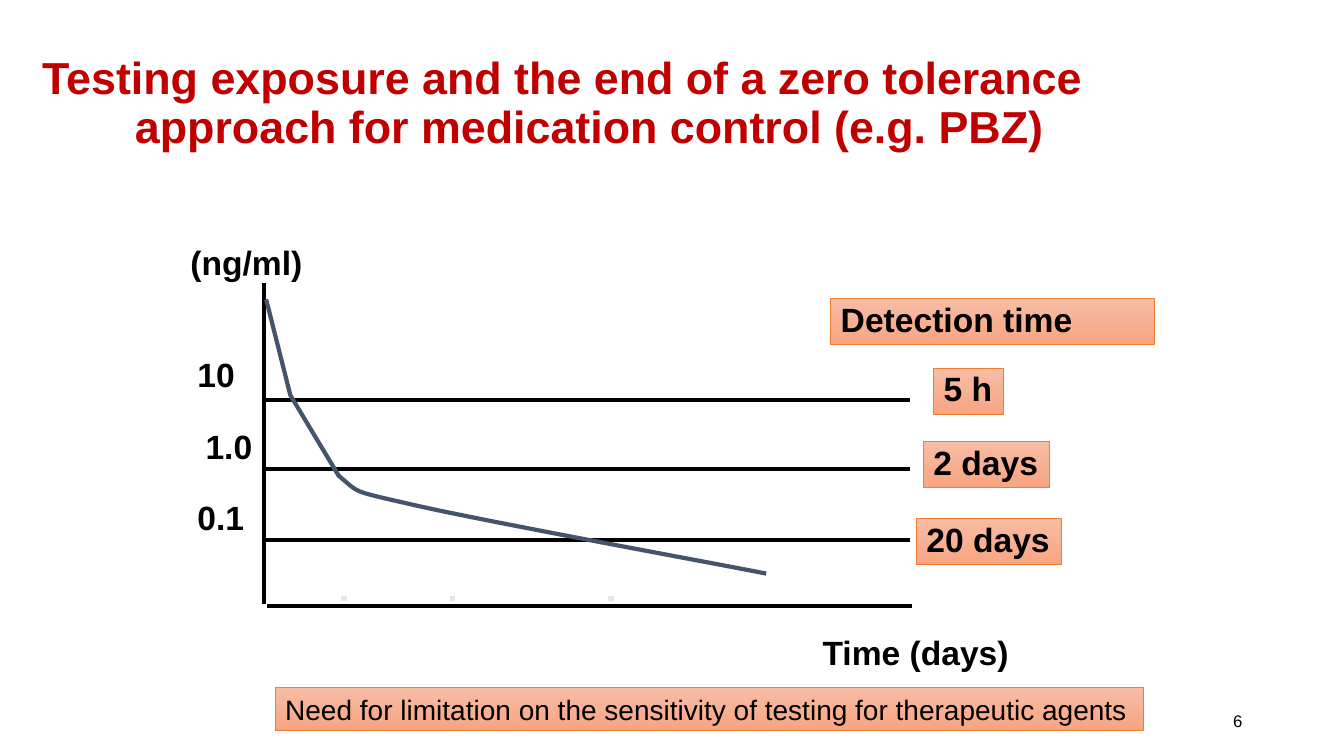
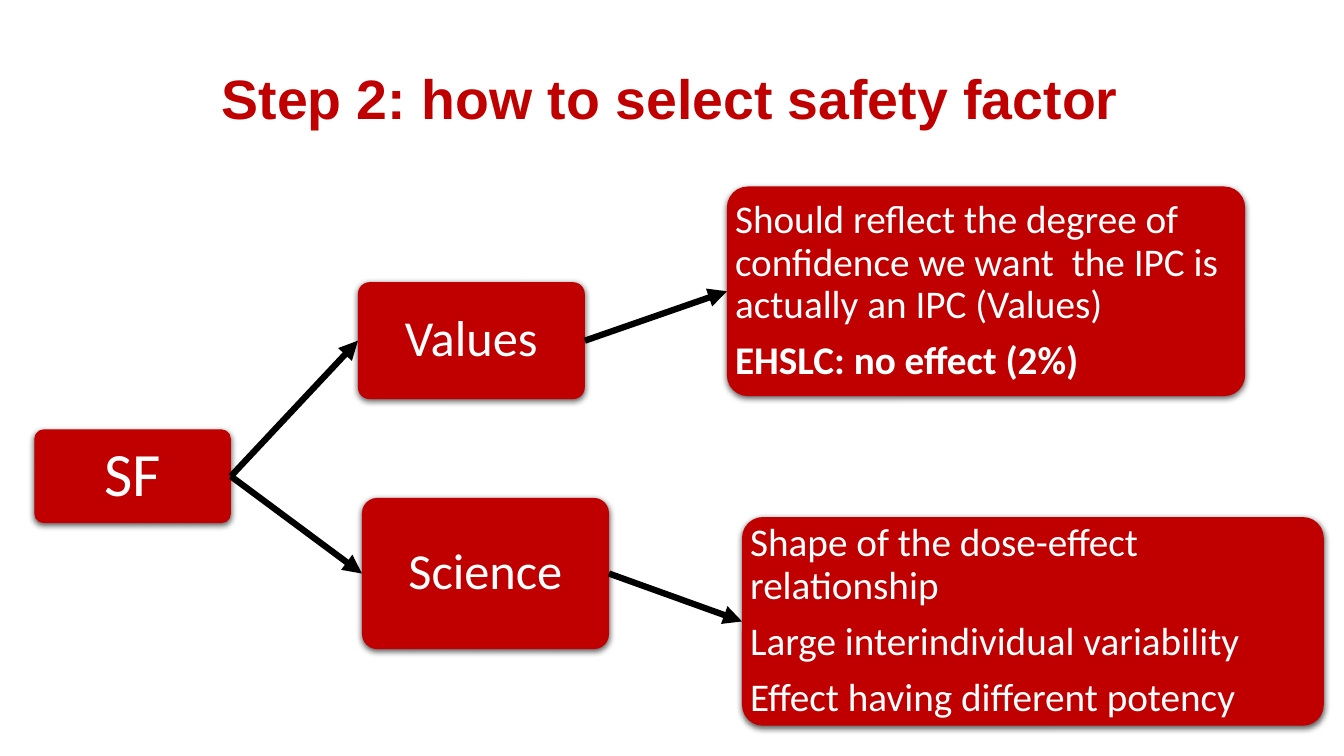
from lxml.etree import SubElement
from pptx import Presentation
from pptx.dml.color import RGBColor
from pptx.enum.shapes import MSO_CONNECTOR, MSO_SHAPE
from pptx.enum.text import MSO_ANCHOR, PP_ALIGN
from pptx.oxml.ns import qn
from pptx.util import Inches, Pt

COLORS = {
    "accent": "C00000",
    "ink": "000000",
    "paper": "FFFFFF",
    "label_top": "F7BDA5",
    "label_bottom": "F8A582",
    "label_edge": "ED7D31",
    "curve": "44546A",
    "tick": "E7E6E6",
}
HEADING_FONT = "Arial"
DIAGRAM_FONT = "Calibri"
LINE_SPACING = 0.9
LEFT_SIDE, RIGHT_SIDE = 1, 3


def rgb(name):
    return RGBColor.from_string(COLORS[name])


def write(shape, paragraphs, size, color="ink", bold=False, font=HEADING_FONT,
          align=PP_ALIGN.LEFT, anchor=MSO_ANCHOR.TOP, wrap=True,
          spacing=LINE_SPACING, after=0):
    frame = shape.text_frame
    frame.word_wrap = wrap
    frame.vertical_anchor = anchor
    frame.text = "\n".join(paragraphs)
    for paragraph in frame.paragraphs:
        paragraph.alignment = align
        paragraph.line_spacing = spacing
        paragraph.space_after = Pt(after)
        for run in paragraph.runs:
            run.font.name = font
            run.font.size = Pt(size)
            run.font.bold = bold
            run.font.color.rgb = rgb(color)


def add_text(slide, box, text, size, **style):
    shape = slide.shapes.add_textbox(*map(Inches, box))
    write(shape, [text], size, **style)
    return shape


def add_title(slide, box, text, size, hanging=0):
    title = add_text(slide, box, text, size, color="accent", bold=True,
                     anchor=MSO_ANCHOR.MIDDLE)
    if hanging:
        properties = title.text_frame.paragraphs[0]._p.get_or_add_pPr()
        properties.set("marL", str(Inches(hanging)))
        properties.set("indent", str(-Inches(hanging)))


def add_page_number(slide, number):
    add_text(slide, (9.42, 6.95, 3, 0.4), number, 12, align=PP_ALIGN.RIGHT,
             anchor=MSO_ANCHOR.MIDDLE, spacing=1)


def add_label(slide, box, text, size=24, **style):
    """Add a salmon gradient box with a thin orange edge."""
    label = slide.shapes.add_shape(MSO_SHAPE.RECTANGLE, *map(Inches, box))
    label.shadow.inherit = False
    label.fill.gradient()
    label.fill.gradient_angle = 270
    for stop, name in zip(label.fill.gradient_stops, ("label_top", "label_bottom")):
        stop.color.rgb = rgb(name)
    label.line.color.rgb = rgb("label_edge")
    label.line.width = Pt(0.5)
    write(label, [text], size, **style)


def add_line(slide, start, end, width, color="ink"):
    line = slide.shapes.add_connector(MSO_CONNECTOR.STRAIGHT,
                                      *map(Inches, (*start, *end)))
    line.line.color.rgb = rgb(color)
    line.line.width = Pt(width)
    SubElement(line._element.spPr, qn("a:effectLst"))
    return line


def bezier(p0, p1, p2, p3, steps=12):
    """Return points along a cubic curve, without its start."""
    points = []
    for step in range(1, steps + 1):
        t = step / steps
        weights = ((1 - t) ** 3, 3 * t * (1 - t) ** 2, 3 * t ** 2 * (1 - t), t ** 3)
        points.append(tuple(sum(w * p[axis] for w, p in zip(weights, (p0, p1, p2, p3)))
                            for axis in (0, 1)))
    return points


def add_decay_curve(slide, left, top):
    steep = [(0.02, 0.16), (0.26, 1.11), (0.74, 1.91)]
    knee = (1.53, 2.21)
    points = (steep
              + bezier(steep[-1], (0.96, 2.09), (0.83, 2.05), knee)
              + bezier(knee, (2.24, 2.37), (4.26, 2.74), (4.98, 2.88)))
    points = [(Inches(left + x), Inches(top + y)) for x, y in points]
    builder = slide.shapes.build_freeform(*points[0])
    builder.add_line_segments(points[1:], close=False)
    curve = builder.convert_to_shape()
    curve.shadow.inherit = False
    curve.fill.background()
    curve.line.color.rgb = rgb("curve")
    curve.line.width = Pt(3)


def add_concentration_plot(slide, left, top, width, height):
    """Draw the axes, threshold lines and decay curve inside the given box."""
    bottom = top + height
    add_line(slide, (left, top), (left, bottom - 0.02), 3)
    add_line(slide, (left + 0.03, bottom), (left + 0.03 + width, bottom), 3)

    caption = {"bold": True, "wrap": False}
    add_text(slide, (left - 0.83, top - 0.41, 1.32, 0.46), "(ng/ml)", 24, **caption)
    add_text(slide, (left + 5.44, bottom + 0.26, 2.06, 0.46), "Time (days)", 24, **caption)

    thresholds = [
        # concentration, label left, label width, line y
        ("10", -0.76, 0.58, 1.16),
        ("1.0", -0.68, 0.67, 1.84),
        ("0.1", -0.76, 0.67, 2.55),
    ]
    for row, (concentration, x, label_width, y) in enumerate(thresholds):
        add_line(slide, (left + 0.01, top + y), (left + 0.01 + width, top + y), 3)
        add_text(slide, (left + x, top + 0.7 + 0.71 * row, label_width, 0.46),
                 concentration, 24, **caption)

    for x in (0.79, 1.87, 3.44):
        add_line(slide, (left + x, bottom - 0.1), (left + x, bottom - 0.05), 4, "tick")
    add_decay_curve(slide, left, top)


def add_detection_times(slide, left, top):
    add_label(slide, (left, top, 3.21, 0.46), "Detection time", bold=True)
    for time, x, y, width in (("5 h", 1.02, 0.69, 0.69),
                              ("2 days", 0.92, 1.42, 1.25),
                              ("20 days", 0.85, 2.18, 1.44)):
        add_label(slide, (left + x, top + y, width, 0.46), time, bold=True, wrap=False)


def add_node(slide, box, paragraphs, size, align=PP_ALIGN.CENTER, inset=0.03):
    """Add a red rounded box with a soft shadow below it."""
    node = slide.shapes.add_shape(MSO_SHAPE.ROUNDED_RECTANGLE, *map(Inches, box))
    node.adjustments[0] = 0.1
    node.fill.solid()
    node.fill.fore_color.rgb = rgb("accent")
    node.line.fill.background()
    node.shadow.inherit = False
    effects = node._element.spPr.find(qn("a:effectLst"))
    shadow = SubElement(effects, qn("a:outerShdw"), blurRad=str(Pt(4.5)),
                        dist=str(Pt(1.5)), dir="5400000", rotWithShape="0")
    shade = SubElement(shadow, qn("a:srgbClr"), val=COLORS["ink"])
    SubElement(shade, qn("a:alpha"), val="63000")
    frame = node.text_frame
    frame.margin_left = frame.margin_right = Inches(inset)
    frame.margin_top = frame.margin_bottom = Inches(inset)
    write(node, paragraphs, size, color="paper", font=DIAGRAM_FONT, align=align,
          anchor=MSO_ANCHOR.MIDDLE, after=0.35 * size)
    return node


def add_detail(slide, box, paragraphs):
    return add_node(slide, box, paragraphs, 28, align=PP_ALIGN.LEFT, inset=0.02)


def add_arrow(slide, source, target):
    arrow = add_line(slide, (0, 0), (1, 1), 4.5)
    arrow.begin_connect(source, RIGHT_SIDE)
    arrow.end_connect(target, LEFT_SIDE)
    SubElement(arrow.line._get_or_add_ln(), qn("a:tailEnd"), type="triangle")


def add_safety_factor_tree(slide, left, top):
    factor = add_node(slide, (left, top + 2.41, 1.95, 0.93), ["SF"], 44)
    values = add_node(slide, (left + 3.21, top + 0.95, 2.25, 1.16), ["Values"], 36)
    science = add_node(slide, (left + 3.25, top + 3.09, 2.45, 1.5), ["Science"], 36)
    confidence = add_detail(slide, (left + 6.87, top, 5.14, 2.08), [
        "Should reflect the degree of confidence we want  the IPC is "
        "actually an IPC (Values)",
        "EHSLC: no effect (2%)",
    ])
    confidence.text_frame.paragraphs[1].runs[0].font.bold = True
    evidence = add_detail(slide, (left + 7.02, top + 3.28, 5.77, 2.07), [
        "Shape of the dose-effect relationship",
        "Large interindividual variability",
        "Effect having different potency",
    ])
    for source, target in ((factor, values), (values, confidence),
                           (factor, science), (science, evidence)):
        add_arrow(slide, source, target)


def build_exposure_slide(slide):
    add_title(slide, (0.32, 0.21, 11.94, 1.65),
              "Testing exposure and the end of a zero tolerance approach for "
              "medication control (e.g. PBZ)", 32, hanging=0.92)
    add_concentration_plot(slide, 2.62, 2.81, 6.4, 3.2)
    add_detection_times(slide, 8.24, 2.96)
    add_label(slide, (2.73, 6.82, 8.61, 0.43),
              "Need for limitation on the sensitivity of testing for therapeutic agents",
              size=20, spacing=1)
    add_page_number(slide, "6")


def build_safety_factor_slide(slide):
    add_title(slide, (2.1, 0.36, 10.03, 1.29), "Step 2: how to select safety factor", 39.6)
    add_safety_factor_tree(slide, 0.34, 1.85)


def main():
    deck = Presentation()
    deck.slide_width = Inches(13.33)
    deck.slide_height = Inches(7.5)
    blank = deck.slide_layouts[6]
    for build in (build_exposure_slide, build_safety_factor_slide):
        build(deck.slides.add_slide(blank))
    deck.save("out.pptx")


if __name__ == "__main__":
    main()
